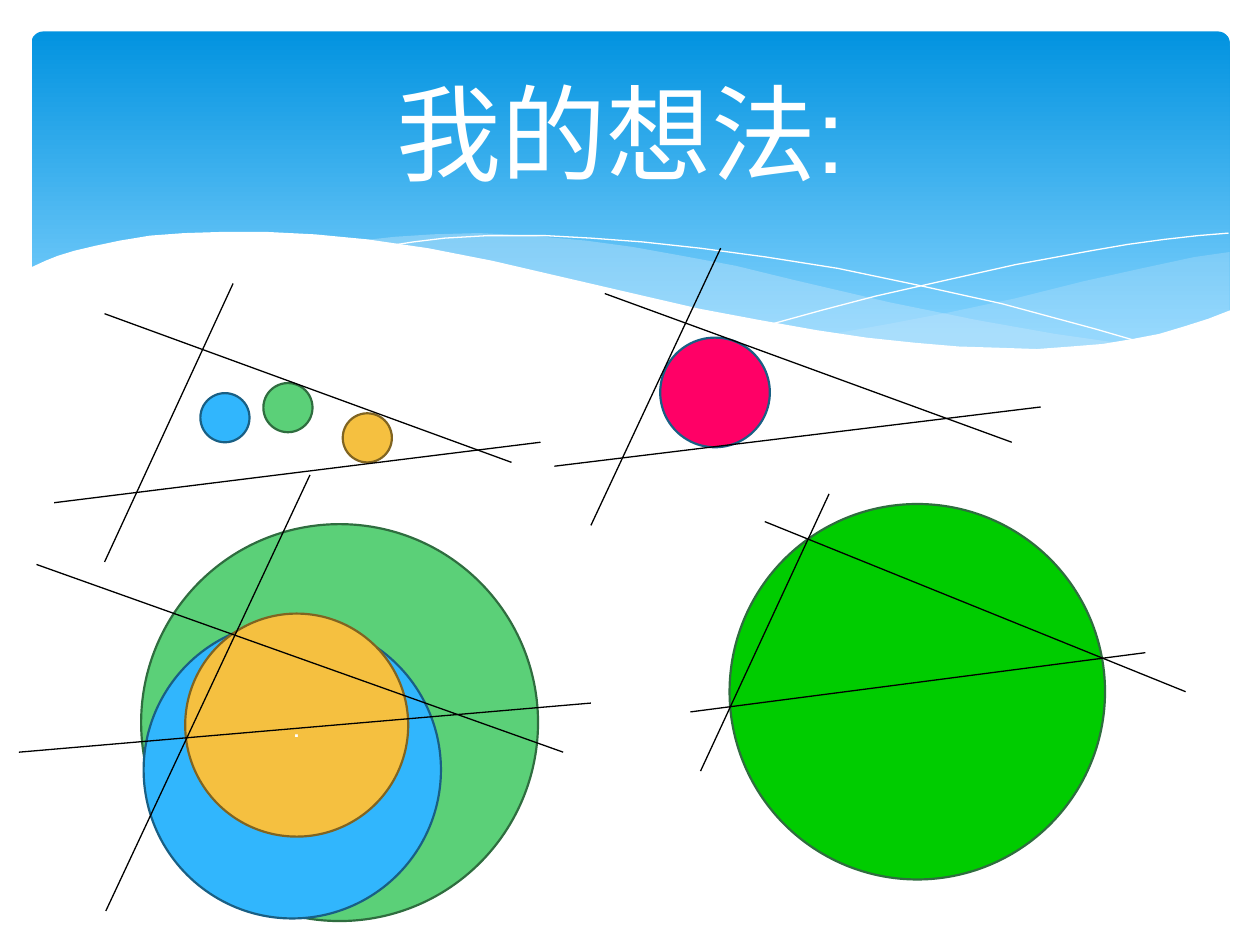
from dataclasses import dataclass

from lxml import etree
from pptx import Presentation
from pptx.dml.color import RGBColor
from pptx.enum.shapes import MSO_CONNECTOR, MSO_SHAPE
from pptx.enum.text import MSO_ANCHOR, PP_ALIGN
from pptx.oxml.ns import qn
from pptx.util import Inches, Pt

ROUNDED = MSO_SHAPE.ROUNDED_RECTANGLE
OVAL = MSO_SHAPE.OVAL
STRAIGHT = MSO_CONNECTOR.STRAIGHT
MIDDLE = MSO_ANCHOR.MIDDLE
CENTER = PP_ALIGN.CENTER
TITLE_ONLY = 5
COLUMNS, ROWS = 10, 7.5


@dataclass(frozen=True)
class Theme:
    white: str = "FFFFFF"
    black: str = "000000"
    sky_top: str = "0293E0"
    sky_bottom: str = "83D3FE"
    mist: str = "C6E7FC"
    blue: tuple = ("31B6FD", "195F84")
    green: tuple = ("5BD078", "2F6D3F")
    amber: tuple = ("F5C040", "806421")
    pink: tuple = ("FF0066", "195F84")
    vivid: tuple = ("00CC00", "2F6D3F")
    title_font: str = "Arial"
    body_font: str = "Cabin"
    title_size: float = 60
    body_size: float = 18
    outline: float = 1.25
    stroke: float = 0.75


THEME = Theme()

RIGHT_MIST = [
    (9.76, 2), (9.48, 2.04), (9.06, 2.13), (8.61, 2.23), (8.05, 2.37), (7.53, 2.48),
    (7.06, 2.57), (6.61, 2.65), (6.91, 2.69), (7.32, 2.74), (7.69, 2.77), (8.14, 2.78),
    (8.54, 2.76), (8.89, 2.72), (9.21, 2.65), (9.49, 2.57), (9.76, 2.47)]
LEFT_MIST = [
    (8.93, 2.73), (8.37, 2.65), (7.75, 2.54), (7.06, 2.4), (6.29, 2.22), (5.84, 2.11),
    (5.41, 2.03), (5.02, 1.96), (4.65, 1.91), (4.2, 1.87), (3.8, 1.85), (3.44, 1.86),
    (3.13, 1.88), (2.86, 1.91), (3.23, 1.96), (3.62, 2.03), (4.04, 2.11), (4.49, 2.22),
    (5.3, 2.4), (5.84, 2.52), (6.34, 2.61), (6.8, 2.68), (7.22, 2.74), (7.61, 2.77),
    (7.96, 2.78), (8.38, 2.78), (8.67, 2.76)]
FALLING_CREST = [
    (3.09, 1.95), (3.28, 1.92), (3.53, 1.89), (3.87, 1.87), (4.33, 1.87), (4.69, 1.89),
    (5.1, 1.92), (5.56, 1.97), (6.08, 2.04), (6.65, 2.13), (7.27, 2.26), (7.95, 2.41),
    (8.69, 2.61), (9.07, 2.72)]
RISING_CREST = [
    (6.13, 2.57), (6.53, 2.46), (6.95, 2.35), (7.48, 2.23), (8.06, 2.1), (8.66, 1.99),
    (8.95, 1.94), (9.24, 1.9), (9.51, 1.87), (9.75, 1.85)]
WHITE_WAVE = [
    (9.77, 2.46), (9.59, 2.53), (9.4, 2.59), (9.2, 2.65), (8.99, 2.69), (8.75, 2.73),
    (8.5, 2.75), (8.23, 2.77), (7.93, 2.76), (7.61, 2.75), (7.26, 2.72), (6.88, 2.68),
    (6.48, 2.62), (6.03, 2.54), (5.55, 2.45), (5.03, 2.33), (4.47, 2.2), (3.91, 2.07),
    (3.4, 1.97), (2.92, 1.9), (2.5, 1.86), (2.11, 1.84), (1.77, 1.84), (1.46, 1.85),
    (1.19, 1.87), (0.95, 1.91), (0.76, 1.95), (0.59, 1.99), (0.46, 2.03), (0.36, 2.07),
    (0.23, 2.13), (0.23, 3.29), (9.77, 3.29)]

FIGURES = [
    ([(5.79, 4, 2.98, THEME.vivid, "")],
     [(6.07, 4.14, 9.41, 5.49), (5.48, 5.65, 9.09, 5.18), (5.56, 6.12, 6.58, 3.92)]),
    ([(1.12, 4.16, 3.15, THEME.green, ""),
      (1.14, 4.93, 2.36, THEME.blue, ""),
      (1.47, 4.87, 1.77, THEME.amber, ".")],
     [(0.29, 4.48, 4.47, 5.97), (0.15, 5.97, 4.69, 5.58), (0.84, 7.23, 2.46, 3.77)]),
    ([(2.72, 3.28, 0.39, THEME.amber, ""),
      (2.09, 3.04, 0.39, THEME.green, ""),
      (1.59, 3.12, 0.39, THEME.blue, "")],
     [(0.83, 2.49, 4.06, 3.67), (0.83, 4.46, 1.85, 2.25), (0.43, 3.99, 4.29, 3.51)]),
    ([(5.24, 2.68, 0.87, THEME.pink, "")],
     [(4.69, 4.17, 5.72, 1.97), (4.4, 3.7, 8.26, 3.23), (4.8, 2.33, 8.03, 3.51)]),
]


def grid(*cells):
    return [Inches(cell) for cell in cells]


def color(value):
    return RGBColor.from_string(value)


def paint(shape, fill, opacity=100):
    shape.shadow.inherit = False
    shape.fill.solid()
    shape.fill.fore_color.rgb = color(fill)
    if opacity < 100:
        tint = shape.fill._xPr.find(qn("a:solidFill"))[0]
        etree.SubElement(tint, qn("a:alpha")).set("val", str(opacity * 1000))


def write(shape, text, font, size):
    frame = shape.text_frame
    frame.text = text
    frame.word_wrap = True
    frame.vertical_anchor = MIDDLE
    para = frame.paragraphs[0]
    para.alignment = CENTER
    for span in para.runs:
        span.font.name = font
        span.font.size = Pt(size)
        span.font.color.rgb = color(THEME.white)


def add_sky(page):
    sky = page.shapes.add_shape(ROUNDED, *grid(0.25, 0.25, 9.51, 2.7))
    sky.adjustments[0] = 0.034
    sky.shadow.inherit = False
    sky.line.fill.background()
    sky.fill.gradient()
    sky.fill.gradient_angle = 270
    stops = ((0, THEME.sky_top), (0.9, THEME.sky_bottom))
    for stop, (position, value) in zip(sky.fill.gradient_stops, stops):
        stop.position = position
        stop.color.rgb = color(value)


def add_outline(page, points, close):
    start, *rest = [grid(*point) for point in points]
    builder = page.shapes.build_freeform(*start)
    builder.add_line_segments(rest, close=close)
    return builder.convert_to_shape()


def add_wave(page, points, fill, opacity=100):
    wave = add_outline(page, points, True)
    paint(wave, fill, opacity)
    wave.line.fill.background()


def add_crest(page, points):
    crest = add_outline(page, points, False)
    crest.shadow.inherit = False
    crest.fill.background()
    crest.line.color.rgb = color(THEME.white)
    crest.line.width = Pt(0)


def add_title(page, text):
    title = page.shapes.title
    title.left, title.top, title.width, title.height = grid(0.43, 0.36, 9, 1.37)
    write(title, text, THEME.title_font, THEME.title_size)
    title.element.getparent().append(title.element)


def add_circle(page, left, top, size, colors, text):
    fill, edge = colors
    circle = page.shapes.add_shape(OVAL, *grid(left, top, size, size))
    paint(circle, fill)
    circle.line.color.rgb = color(edge)
    circle.line.width = Pt(THEME.outline)
    if text:
        write(circle, text, THEME.body_font, THEME.body_size)


def add_line(page, *ends):
    line = page.shapes.add_connector(STRAIGHT, *grid(*ends))
    line.line.color.rgb = color(THEME.black)
    line.line.width = Pt(THEME.stroke)
    etree.SubElement(line.element.spPr, qn("a:effectLst"))


def add_figure(page, circles, lines):
    for circle in circles:
        add_circle(page, *circle)
    for line in lines:
        add_line(page, *line)


def main():
    deck = Presentation()
    deck.slide_width, deck.slide_height = grid(COLUMNS, ROWS)
    page = deck.slides.add_slide(deck.slide_layouts[TITLE_ONLY])
    add_sky(page)
    add_wave(page, RIGHT_MIST, THEME.mist, 29)
    add_wave(page, LEFT_MIST, THEME.mist, 40)
    add_crest(page, FALLING_CREST)
    add_crest(page, RISING_CREST)
    add_wave(page, WHITE_WAVE, THEME.white)
    add_title(page, "我的想法:")
    for circles, lines in FIGURES:
        add_figure(page, circles, lines)
    deck.save("out.pptx")


if __name__ == "__main__":
    main()
